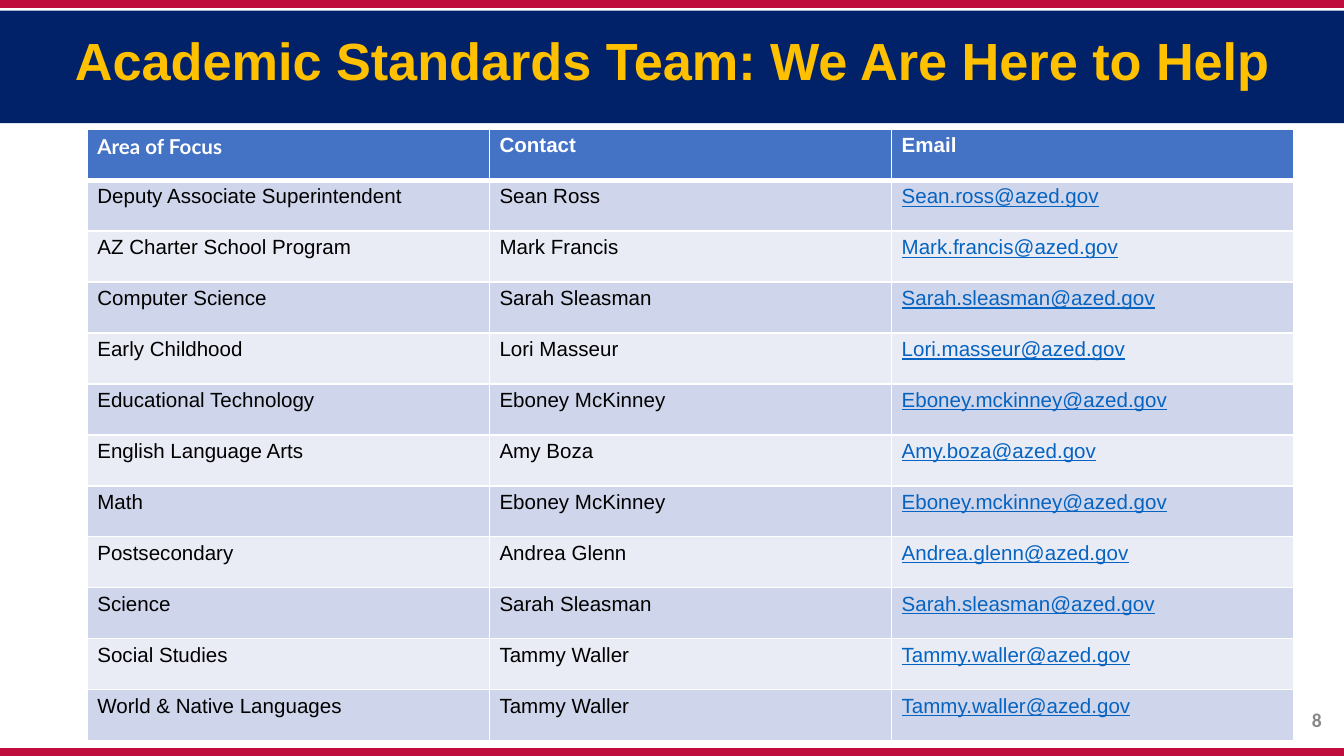
from lxml import etree
from pptx import Presentation
from pptx.dml.color import RGBColor
from pptx.enum.shapes import MSO_SHAPE
from pptx.enum.text import MSO_ANCHOR, PP_ALIGN
from pptx.oxml.ns import qn
from pptx.util import Cm, Pt

RECTANGLE = MSO_SHAPE.RECTANGLE
MIDDLE = MSO_ANCHOR.MIDDLE
CENTER, RIGHT = PP_ALIGN.CENTER, PP_ALIGN.RIGHT

WHITE = RGBColor(0xFF, 0xFF, 0xFF)
BLACK = RGBColor(0x00, 0x00, 0x00)
RED = RGBColor(0xBF, 0x0D, 0x3E)
NAVY = RGBColor(0x01, 0x21, 0x69)
GOLD = RGBColor(0xFF, 0xC0, 0x00)
GREY = RGBColor(0x88, 0x88, 0x88)
HEADER_BLUE = RGBColor(0x44, 0x72, 0xC4)
LINK_BLUE = RGBColor(0x05, 0x63, 0xC1)
BANDS = [RGBColor(0xCF, 0xD5, 0xEA), RGBColor(0xE9, 0xEB, 0xF5)]

SLIDE_WIDTH, SLIDE_HEIGHT = 25.4, 14.29

HEADINGS = ["Area of Focus", "Contact", "Email"]
TEAM = [
    ("Deputy Associate Superintendent", "Sean Ross"),
    ("AZ Charter School Program", "Mark Francis"),
    ("Computer Science", "Sarah Sleasman"),
    ("Early Childhood", "Lori Masseur"),
    ("Educational Technology", "Eboney McKinney"),
    ("English Language Arts", "Amy Boza"),
    ("Math", "Eboney McKinney"),
    ("Postsecondary", "Andrea Glenn"),
    ("Science", "Sarah Sleasman"),
    ("Social Studies", "Tammy Waller"),
    ("World & Native Languages", "Tammy Waller"),
]


def email_address(name):
    return name.replace(" ", ".").capitalize() + "@azed.gov"


class SlideBuilder:
    """Draws styled elements on one slide; lengths are in centimetres."""

    font_name = "Arial"
    table_size = 11

    def __init__(self, slide):
        self.slide = slide

    def format_text(self, paragraph, size, color, bold=False, font_name=None):
        for run in paragraph.runs:
            run.font.name = font_name or self.font_name
            run.font.size = Pt(size)
            run.font.bold = bold
            run.font.color.rgb = color

    def bar(self, top, height, color):
        """Full-width band."""
        shape = self.slide.shapes.add_shape(
            RECTANGLE, Cm(0), Cm(top), Cm(SLIDE_WIDTH), Cm(height))
        shape.shadow.inherit = False
        shape.fill.solid()
        shape.fill.fore_color.rgb = color
        shape.line.fill.background()

    def text(self, text, left, top, width, height, size, color, alignment,
             font_name=None, line_spacing=1.0):
        """One bold line, centred vertically."""
        shape = self.slide.shapes.add_textbox(
            Cm(left), Cm(top), Cm(width), Cm(height))
        frame = shape.text_frame
        frame.word_wrap = True
        frame.vertical_anchor = MIDDLE
        frame.margin_top = frame.margin_bottom = 0
        frame.text = text
        paragraph = frame.paragraphs[0]
        paragraph.alignment = alignment
        paragraph.line_spacing = line_spacing
        self.format_text(paragraph, size, color, True, font_name)

    def borders(self, cell, top, bottom):
        """White borders: 1 pt at the sides, given points above and below."""
        properties = cell._tc.get_or_add_tcPr()
        for tag, width in (("lnL", 1), ("lnR", 1), ("lnT", top), ("lnB", bottom)):
            line = etree.SubElement(properties, qn(f"a:{tag}"), w=str(Pt(width)))
            fill = etree.SubElement(line, qn("a:solidFill"))
            etree.SubElement(fill, qn("a:srgbClr"), val=str(WHITE))

    def cell(self, cell, text, fill, color, bold=False, font_name=None):
        cell.margin_left = cell.margin_right = Cm(0.19)
        cell.margin_top = cell.margin_bottom = Cm(0.1)
        cell.fill.solid()
        cell.fill.fore_color.rgb = fill
        cell.text = text
        self.format_text(cell.text_frame.paragraphs[0], self.table_size, color,
                         bold, font_name)

    def contact_table(self, left, top, width, height):
        table = self.slide.shapes.add_table(
            len(TEAM) + 1, len(HEADINGS),
            Cm(left), Cm(top), Cm(width), Cm(height)).table
        for row_index, row in enumerate(table.rows):
            for cell in row.cells:
                self.borders(cell, top=3 if row_index == 1 else 1,
                             bottom=3 if row_index == 0 else 1)
        for column, heading in enumerate(HEADINGS):
            self.cell(table.cell(0, column), heading, HEADER_BLUE, WHITE, True,
                      "Lato" if column == 0 else None)
        for index, (area, name) in enumerate(TEAM):
            fill = BANDS[index % 2]
            area_cell, name_cell, email_cell = table.rows[index + 1].cells
            self.cell(area_cell, area, fill, BLACK)
            self.cell(name_cell, name, fill, BLACK)
            self.cell(email_cell, email_address(name), fill, LINK_BLUE)
            email_cell.text_frame.paragraphs[0].runs[0].font.underline = True


def main():
    presentation = Presentation()
    presentation.slide_width = Cm(SLIDE_WIDTH)
    presentation.slide_height = Cm(SLIDE_HEIGHT)
    builder = SlideBuilder(
        presentation.slides.add_slide(presentation.slide_layouts[6]))

    builder.bar(0, 0.15, RED)
    builder.bar(SLIDE_HEIGHT - 0.15, 0.15, RED)
    builder.bar(0.2, 2.13, NAVY)
    builder.text("Academic Standards Team: We Are Here to Help",
                 0, 0.53, SLIDE_WIDTH, 1.35, 28, GOLD, CENTER, line_spacing=0.9)
    builder.text("8", 19.51, 13.23, 5.72, 0.76, 10.5, GREY, RIGHT, "Calibri")
    builder.contact_table(1.65, 2.44, 22.8, 11.56)

    presentation.save("out.pptx")


if __name__ == "__main__":
    main()
